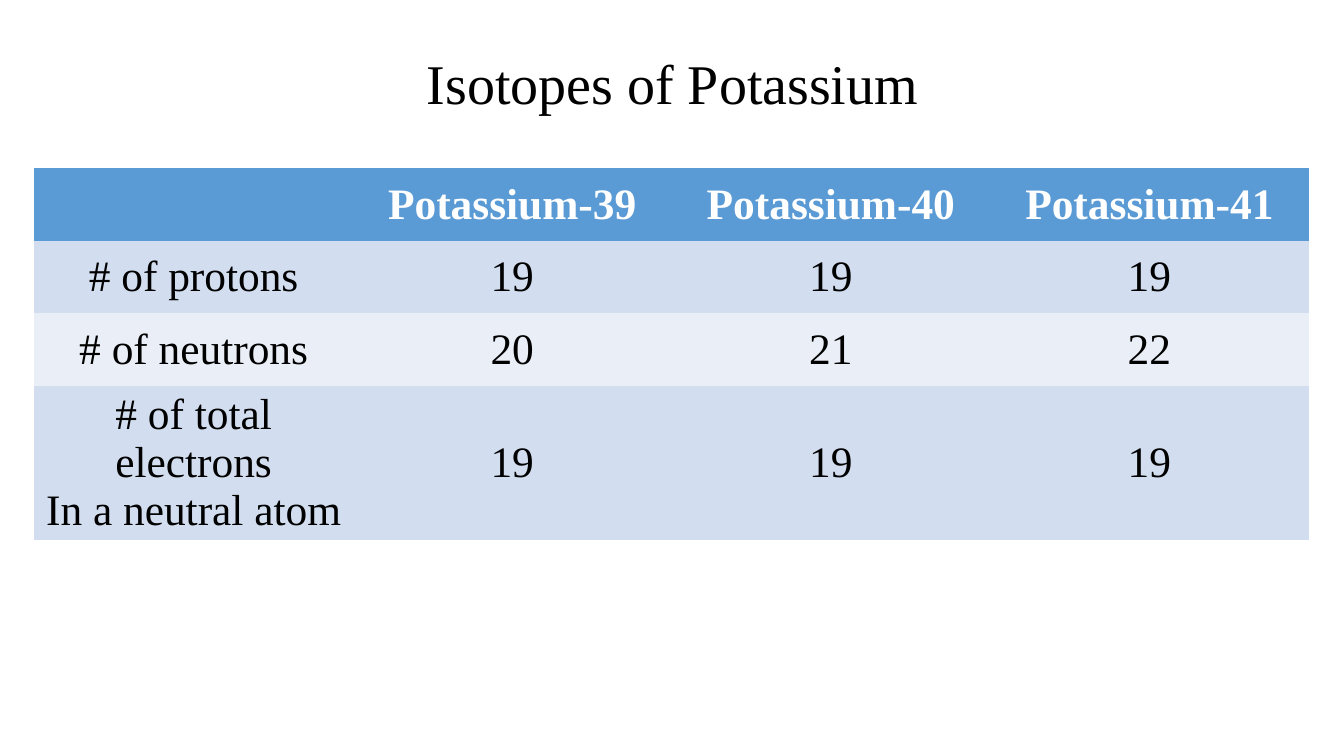
from dataclasses import dataclass

from pptx import Presentation
from pptx.dml.color import RGBColor
from pptx.enum.text import MSO_ANCHOR as Anchor, MSO_AUTO_SIZE as AutoSize, PP_ALIGN as Align
from pptx.oxml.ns import qn
from pptx.util import Emu, Pt

PX = 9144  # EMU in one px, 100 px to the inch
FONT = "Times New Roman"
BLACK, WHITE = "000000", "FFFFFF"
HEADER_FILL = "5B9BD5"
BAND_FILLS = ("D2DEEF", "EAEFF7")
PLAIN_TABLE_STYLE = "{2D5ABB26-0587-4C30-8999-92F81FD0307C}"


@dataclass(frozen=True)
class TableRow:
    height: int
    texts: tuple[str, ...]


ROWS = (
    TableRow(72, ("", "Potassium-39", "Potassium-40", "Potassium-41")),
    TableRow(72, ("# of protons", "19", "19", "19")),
    TableRow(72, ("# of neutrons", "20", "21", "22")),
    TableRow(137, ("# of total electrons\nIn a neutral atom", "19", "19", "19")),
)
COLUMN_WIDTH = 316


def px(length: int) -> Emu:
    return Emu(length * PX)


def color(value: str) -> RGBColor:
    return RGBColor.from_string(value)


def write_text(frame, text: str, *, size: float, hex_color: str = BLACK,
               bold: bool = False, line_spacing: float = 1.0) -> None:
    frame.text = text
    for paragraph in frame.paragraphs:
        paragraph.alignment = Align.CENTER
        paragraph.line_spacing = line_spacing
        paragraph.font.size = Pt(size)
        for run in paragraph.runs:
            run.font.name = FONT
            run.font.size = Pt(size)
            run.font.bold = bold
            run.font.color.rgb = color(hex_color)


def add_title(slide, text: str) -> None:
    title = slide.shapes.title
    title.left, title.top, title.width, title.height = map(px, (92, 40, 1150, 91))
    frame = title.text_frame
    frame.auto_size = AutoSize.NONE
    frame.vertical_anchor = Anchor.MIDDLE
    write_text(frame, text, size=40, line_spacing=0.9)


def add_isotope_table(slide, left: int, top: int) -> None:
    column_count = len(ROWS[0].texts)
    total_height = sum(row.height for row in ROWS)
    table = slide.shapes.add_table(
        len(ROWS), column_count, px(left), px(top),
        px(column_count * COLUMN_WIDTH), px(total_height)).table
    # Borderless style; the cells carry their own fills
    table._tbl.tblPr.find(qn("a:tableStyleId")).text = PLAIN_TABLE_STYLE
    for column in table.columns:
        column.width = px(COLUMN_WIDTH)

    for row_index, row in enumerate(ROWS):
        is_header = row_index == 0
        fill = HEADER_FILL if is_header else BAND_FILLS[(row_index - 1) % 2]
        table.rows[row_index].height = px(row.height)
        for column_index, text in enumerate(row.texts):
            cell = table.cell(row_index, column_index)
            cell.fill.solid()
            cell.fill.fore_color.rgb = color(fill)
            cell.vertical_anchor = Anchor.MIDDLE
            write_text(cell.text_frame, text, size=31, bold=is_header,
                       hex_color=WHITE if is_header else BLACK)


def main() -> None:
    presentation = Presentation()
    presentation.slide_width, presentation.slide_height = px(1333), px(750)
    slide = presentation.slides.add_slide(presentation.slide_layouts[5])
    add_title(slide, "Isotopes of Potassium")
    add_isotope_table(slide, 34, 167)
    presentation.save("out.pptx")


if __name__ == "__main__":
    main()
